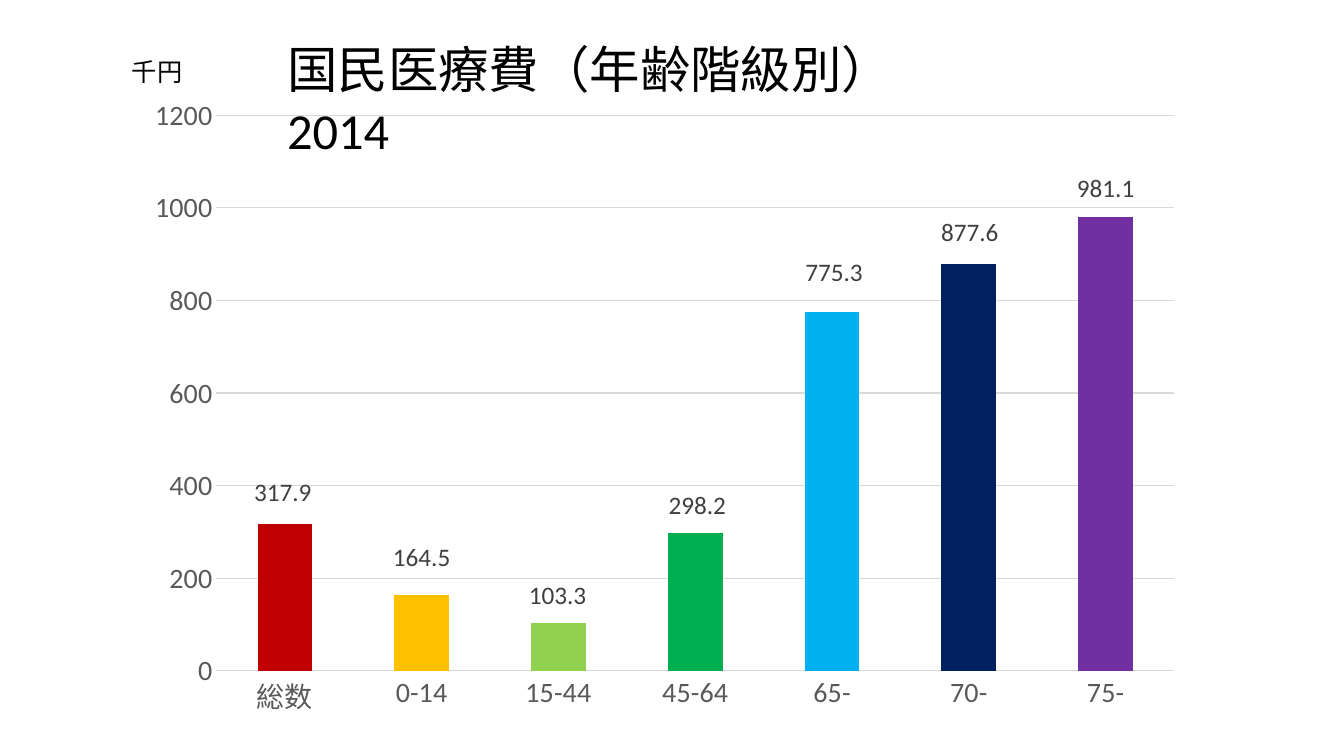
from lxml.etree import SubElement, QName
from pptx import Presentation
from pptx.chart.data import CategoryChartData
from pptx.dml.color import RGBColor
from pptx.enum.chart import XL_CHART_TYPE, XL_LABEL_POSITION, XL_TICK_MARK
from pptx.oxml import parse_xml
from pptx.oxml.ns import nsdecls, qn
from pptx.util import Inches, Pt

CHART_WIDTH, CHART_HEIGHT = 10.57, 6.38
PLOT = {"x": 0.101, "y": 0.035, "w": 0.899, "h": 0.864}
AXIS_MAX = 1200

# Age group, cost, bar colour, label shift right and label gap above the bar (inches)
AGE_GROUPS = [
    ("総数", 317.9, "C00000", -0.02, 0.31),
    ("0-14", 164.5, "FFC000", 0, 0.37),
    ("15-44", 103.3, "92D050", -0.01, 0.27),
    ("45-64", 298.2, "00B050", 0.02, 0.27),
    ("65-", 775.3, "00B0F0", 0.02, 0.39),
    ("70-", 877.6, "002060", 0.01, 0.32),
    ("75-", 981.1, "7030A0", 0, 0.28),
]


def color(code):
    return RGBColor.from_string(code)


def add_text(page, text, left, top, width, height, size, wrap):
    box = page.shapes.add_textbox(Inches(left), Inches(top), Inches(width), Inches(height))
    box.text_frame.word_wrap = wrap
    span = box.text_frame.paragraphs[0].add_run()
    span.text = text
    span.font.name = "Calibri"
    span.font.size = Pt(size)
    span.font.color.rgb = color("000000")


deck = Presentation()
deck.slide_width, deck.slide_height = Inches(13.33), Inches(7.5)
page = deck.slides.add_slide(deck.slide_layouts[6])

# Column chart
data = CategoryChartData()
data.categories = [group[0] for group in AGE_GROUPS]
data.add_series("国民医療費", [group[1] for group in AGE_GROUPS])
chart = page.shapes.add_chart(
    XL_CHART_TYPE.COLUMN_STACKED, Inches(1.08), Inches(0.92),
    Inches(CHART_WIDTH), Inches(CHART_HEIGHT), data).chart
chart.has_legend = False
chart.has_title = False
chart.font.name = "Calibri"
chart.font.size = Pt(10)
plot = chart.plots[0]
plot.gap_width, plot.overlap = 150, 100
plot.vary_by_categories = False

# Axes
for axis in (chart.category_axis, chart.value_axis):
    axis.major_tick_mark = axis.minor_tick_mark = XL_TICK_MARK.NONE
    axis.tick_labels.font.name = "Calibri"
    axis.tick_labels.font.size = Pt(20)
    axis.tick_labels.font.color.rgb = color("595959")
chart.value_axis.minimum_scale, chart.value_axis.maximum_scale = 0, AXIS_MAX
chart.value_axis.major_unit = 200
chart.value_axis.format.line.fill.background()
chart.value_axis.has_major_gridlines = True
for line in (chart.category_axis.format.line, chart.value_axis.major_gridlines.format.line):
    line.color.rgb = color("D9D9D9")
    line.width = Pt(0.75)

# Bars and their labels
series = plot.series[0]
series.format.fill.solid()
series.format.fill.fore_color.rgb = color("5B9BD5")
for index, group in enumerate(AGE_GROUPS):
    point = series.points[index]
    point.format.fill.solid()
    point.format.fill.fore_color.rgb = color(group[2])
    label = point.data_label
    label.position = XL_LABEL_POSITION.CENTER
    label.font.name = "Calibri"
    label.font.size = Pt(18)
    label.font.color.rgb = color("404040")

# Labels lifted from the bar centre to above the bar
for label_xml, group in zip(chart.element.iter(qn("c:dLbl")), AGE_GROUPS):
    name, cost, fill, shift, gap = group
    lift = cost / AXIS_MAX * PLOT["h"] / 2 + gap / CHART_HEIGHT
    label_xml.insert(1, parse_xml(
        f'<c:layout {nsdecls("c")}><c:manualLayout><c:x val="{shift / CHART_WIDTH:.4f}"/>'
        f'<c:y val="{-lift:.4f}"/></c:manualLayout></c:layout>'))

# No leader lines between bars and labels
labels_xml = next(chart.element.iter(qn("c:dLbls")))
for leader_lines in labels_xml.findall(qn("c:showLeaderLines")):
    labels_xml.remove(leader_lines)
SubElement(labels_xml, qn("c:showLeaderLines"), val="0")
labels_xml.append(parse_xml(
    f'<c:extLst {nsdecls("c")}><c:ext uri="{{CE6537A1-D6FC-4f65-9D91-7224C49458BB}}" '
    'xmlns:c15="http://schemas.microsoft.com/office/drawing/2012/chart">'
    '<c15:showLeaderLines val="0"/></c:ext></c:extLst>'))

# Plot area position
plot_area = next(chart.element.iter(qn("c:plotArea")))
for old_layout in plot_area.findall(qn("c:layout")):
    plot_area.remove(old_layout)
layout = parse_xml(f'<c:layout {nsdecls("c")}><c:manualLayout/></c:layout>')
settings = {"layoutTarget": "inner", "xMode": "edge", "yMode": "edge", **PLOT}
for key, value in settings.items():
    SubElement(layout[0], QName(qn("c:" + key)), val=str(value))
plot_area.insert(0, layout)

# Title and unit
add_text(page, "国民医療費（年齢階級別）2014", 2.75, 0.33, 6.78, 0.71, 36, True)
add_text(page, "千円", 1.21, 0.51, 0.71, 0.4, 18, False)

deck.save("out.pptx")
